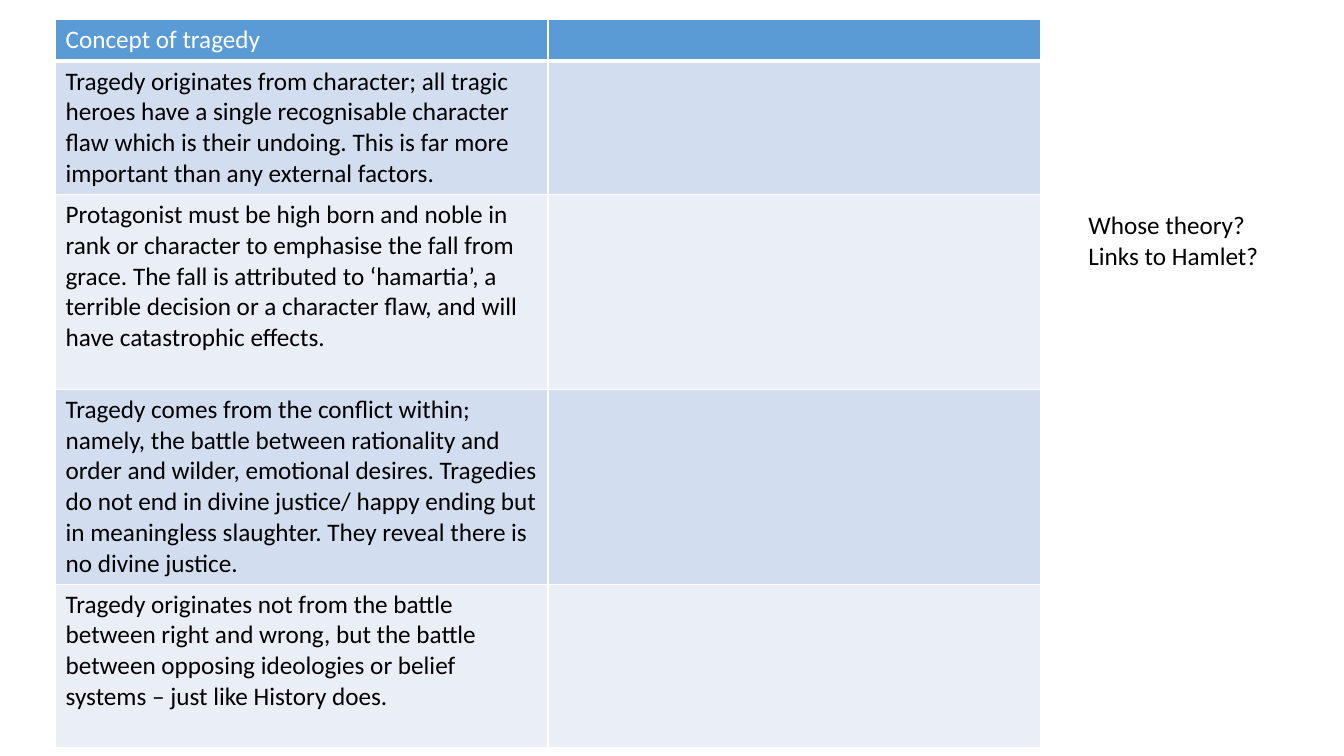
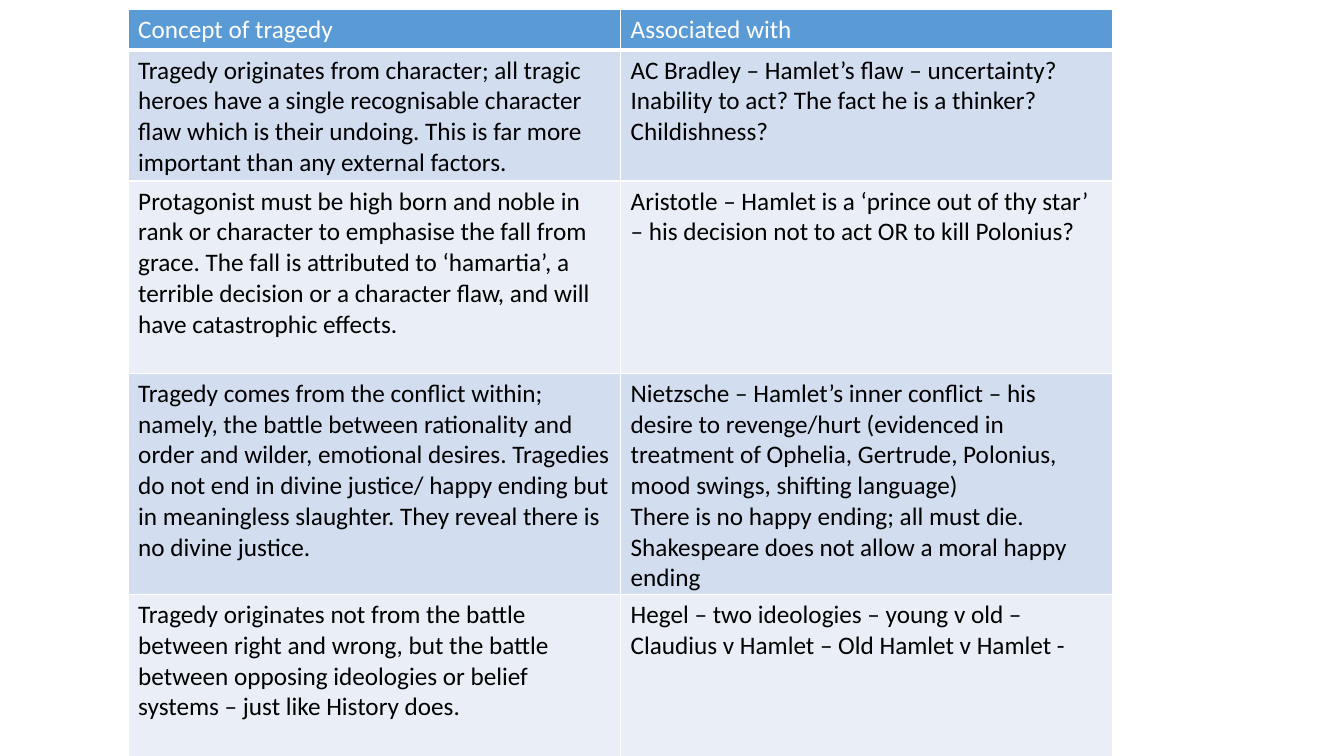
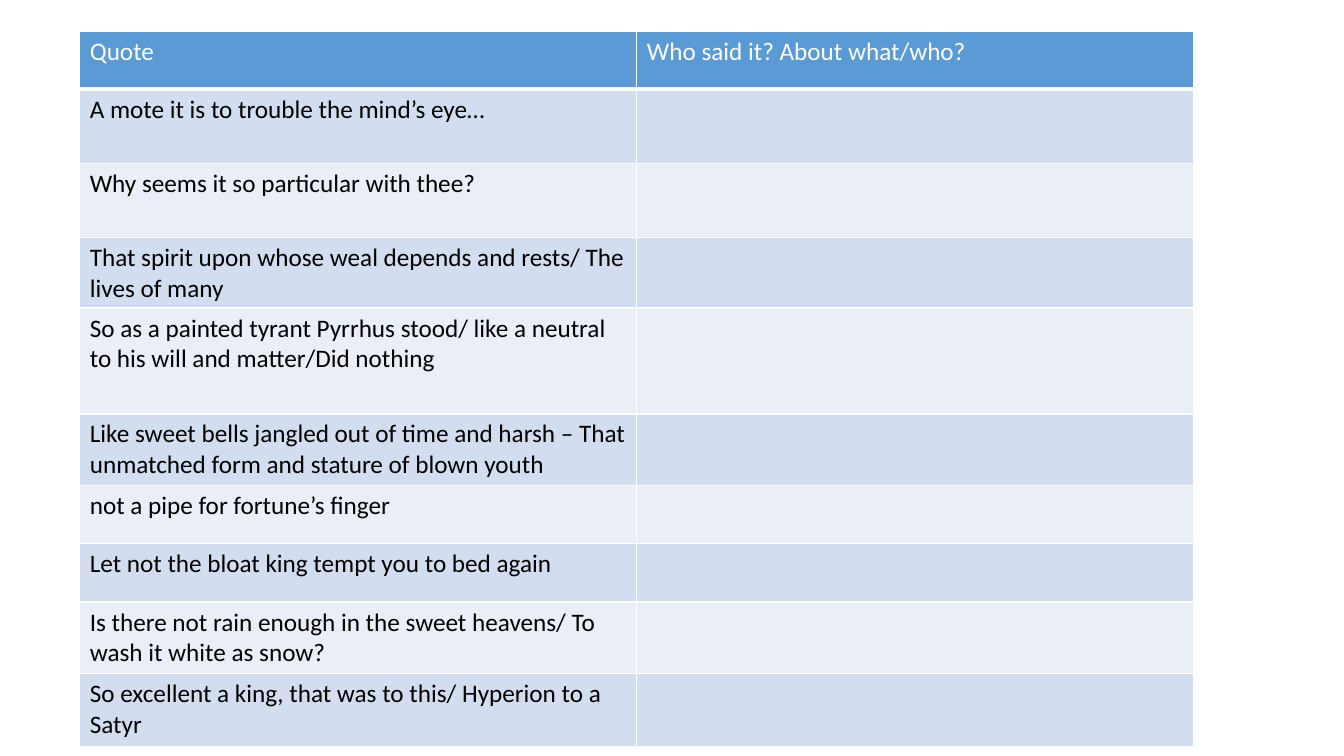
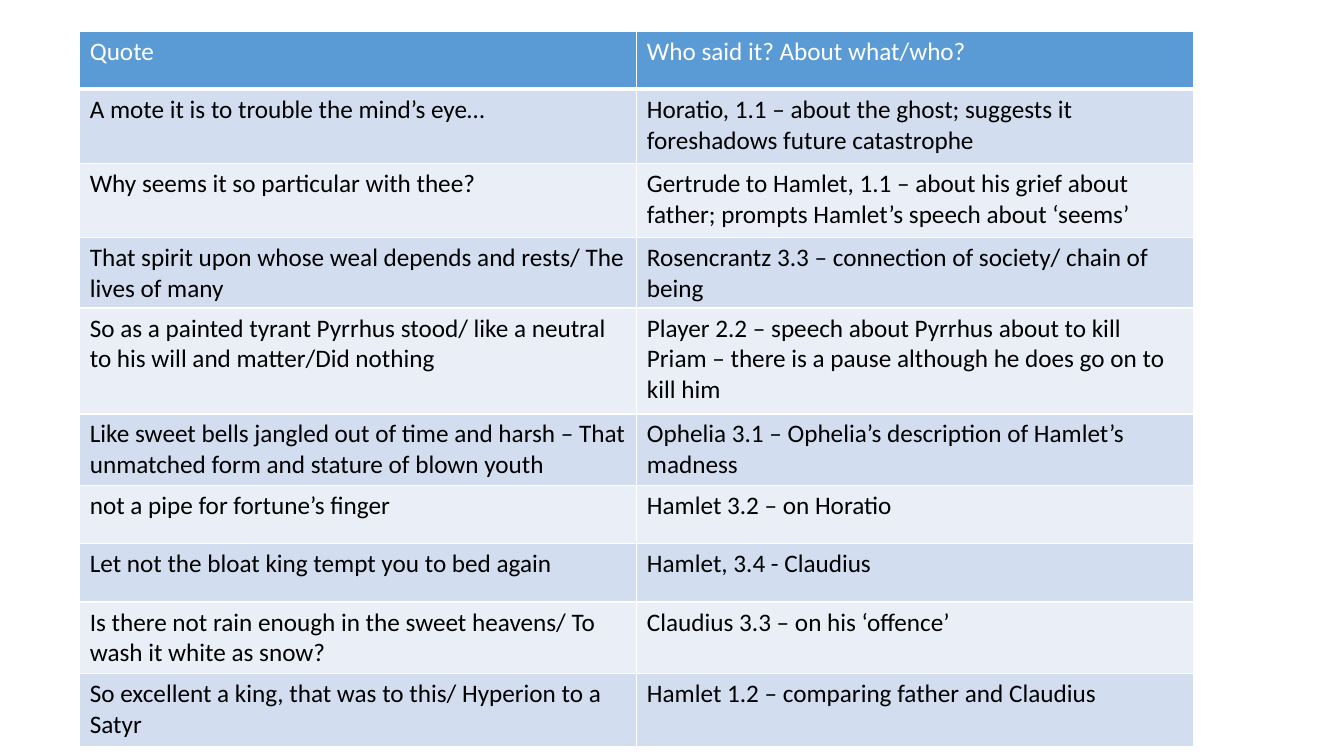
from lxml.etree import SubElement
from pptx import Presentation
from pptx.dml.color import RGBColor
from pptx.oxml.ns import qn
from pptx.util import Cm, Pt

HEAD, DARK, LIGHT = "5B9BD5", "D2DEEF", "EAEFF7"
WHITE, BLACK = "FFFFFF", "000000"
FONT = {"name": "Calibri", "size": Pt(18), "bold": False}
EDGES = {"a:lnL": 1, "a:lnR": 1, "a:lnT": 1, "a:lnB": 1}

IDEAS = [
    ("Tragedy originates from character; all tragic heroes have a single recognisable character flaw "
     "which is their undoing. This is far more important than any external factors.",
     "AC Bradley – Hamlet’s flaw – uncertainty? Inability to act? The fact he is a thinker? Childishness?"),
    ("Protagonist must be high born and noble in rank or character to emphasise the fall from grace. "
     "The fall is attributed to ‘hamartia’, a terrible decision or a character flaw, and will have "
     "catastrophic effects.",
     "Aristotle – Hamlet is a ‘prince out of thy star’ – his decision not to act OR to kill Polonius?"),
    ("Tragedy comes from the conflict within; namely, the battle between rationality and order and "
     "wilder, emotional desires. Tragedies do not end in divine justice/ happy ending but in "
     "meaningless slaughter. They reveal there is no divine justice.",
     "Nietzsche – Hamlet’s inner conflict – his desire to revenge/hurt (evidenced in treatment of "
     "Ophelia, Gertrude, Polonius, mood swings, shifting language)\n"
     "There is no happy ending; all must die. Shakespeare does not allow a moral happy ending"),
    ("Tragedy originates not from the battle between right and wrong, but the battle between opposing "
     "ideologies or belief systems – just like History does.",
     "Hegel – two ideologies – young v old – Claudius v Hamlet – Old Hamlet v Hamlet -"),
]

QUOTES = [
    ("Quote", "Who said it? About what/who?"),
    ("A mote it is to trouble the mind’s eye…",
     "Horatio, 1.1 – about the ghost; suggests it foreshadows future catastrophe"),
    ("Why seems it so particular with thee?",
     "Gertrude to Hamlet, 1.1 – about his grief about father; prompts Hamlet’s speech about ‘seems’"),
    ("That spirit upon whose weal depends and rests/ The lives of many",
     "Rosencrantz 3.3 – connection of society/ chain of being"),
    ("So as a painted tyrant Pyrrhus stood/ like a neutral to his will and matter/Did nothing",
     "Player 2.2 – speech about Pyrrhus about to kill Priam – there is a pause although he does go "
     "on to kill him"),
    ("Like sweet bells jangled out of time and harsh – That unmatched form and stature of blown youth",
     "Ophelia 3.1 – Ophelia’s description of Hamlet’s madness"),
    ("not a pipe for fortune’s finger", "Hamlet 3.2 – on Horatio"),
    ("Let not the bloat king tempt you to bed again", "Hamlet, 3.4 - Claudius"),
    ("Is there not rain enough in the sweet heavens/ To wash it white as snow?",
     "Claudius 3.3 – on his ‘offence’"),
    ("So excellent a king, that was to this/ Hyperion to a Satyr",
     "Hamlet 1.2 – comparing father and Claudius"),
]

TASK = "Whose theory?\nLinks to Hamlet?"
TALL = [1.45, 1.87, 1.87, 1.77, 2.67, 1.8, 1.47, 1.47, 1.8, 1.84]


def blank(rows):
    return [(left, "") for left, right in rows]


PAGES = [
    {"rows": [("Concept of tragedy", "")] + blank(IDEAS),
     "at": (1.4, 0.5), "wide": 12.41, "tall": [1.04, 3.36, 4.91, 4.91, 4.13], "note": TASK},
    {"rows": [("Concept of tragedy", "Associated with")] + IDEAS,
     "at": (3.23, 0.24), "wide": 12.41, "tall": [1.02, 3.3, 4.85, 5.57, 4.13]},
    {"rows": QUOTES[:1] + blank(QUOTES[1:]), "at": (2.01, 0.8), "wide": 14.04, "tall": TALL},
    {"rows": QUOTES, "at": (2.01, 0.8), "wide": 14.04, "tall": TALL},
]


def tint(code):
    return RGBColor.from_string(code)


def write(frame, text, ink):
    frame.text = text
    for para in frame.paragraphs:
        for key, value in FONT.items():
            setattr(para.font, key, value)
        para.font.color.rgb = tint(ink)


def edge(cell, edges):
    props = cell._tc.get_or_add_tcPr()
    for tag, size in edges.items():
        line = SubElement(props, qn(tag), w=str(Pt(size)))
        fill = SubElement(line, qn("a:solidFill"))
        SubElement(fill, qn("a:srgbClr"), val=WHITE)


def grid(slide, rows, at, wide, tall):
    x, y = at
    table = slide.shapes.add_table(
        len(rows), 2, Cm(x), Cm(y), Cm(2 * wide), Cm(sum(tall))).table
    table.first_row = table.horz_banding = False
    for col in table.columns:
        col.width = Cm(wide)
    for r, texts in enumerate(rows):
        table.rows[r].height = Cm(tall[r])
        back = (DARK if r % 2 else LIGHT) if r else HEAD
        for c, text in enumerate(texts):
            cell = table.cell(r, c)
            cell.margin_bottom = 0
            write(cell.text_frame, text, BLACK if r else WHITE)
            edge(cell, EDGES if r else {**EDGES, "a:lnB": 3})
            cell.fill.solid()
            cell.fill.fore_color.rgb = tint(back)


def main():
    deck = Presentation()
    deck.slide_width, deck.slide_height = Cm(33.87), Cm(19.05)
    for page in PAGES:
        slide = deck.slides.add_slide(deck.slide_layouts[6])
        grid(slide, page["rows"], page["at"], page["wide"], page["tall"])
        if "note" in page:
            box = slide.shapes.add_textbox(Cm(27.18), Cm(5.16), Cm(5.05), Cm(1.8))
            box.text_frame.word_wrap = True
            write(box.text_frame, page["note"], BLACK)
    deck.save("out.pptx")


if __name__ == "__main__":
    main()
